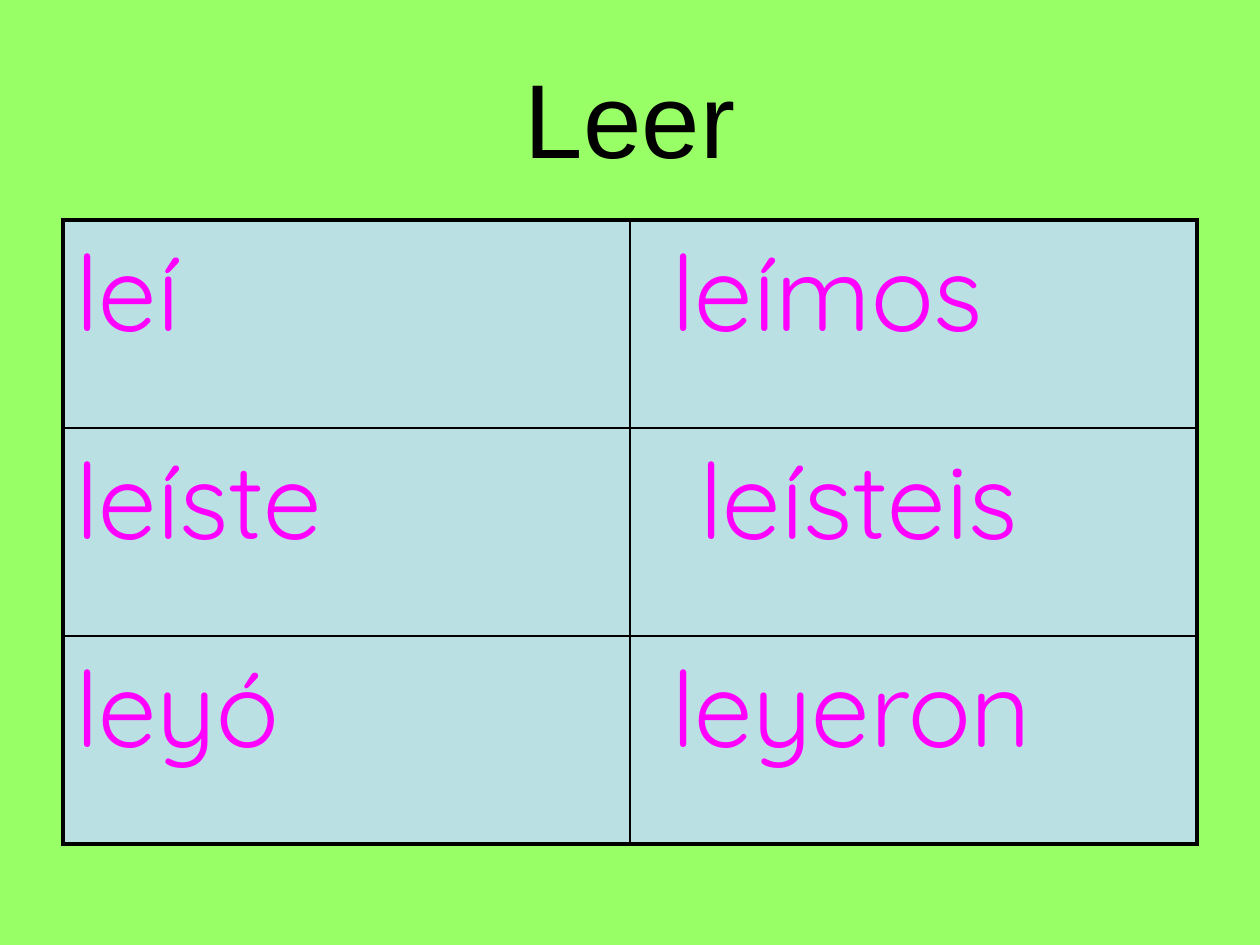
from lxml.etree import SubElement
from pptx import Presentation
from pptx.dml.color import RGBColor
from pptx.enum.text import MSO_ANCHOR, PP_ALIGN
from pptx.oxml.ns import qn
from pptx.util import Pt

EMU_PER_PX = 914400 / 126
COLORS = {
    "background": "99FF66",
    "cell": "BBE0E3",
    "border": "000000",
    "title": "000000",
    "verb": "FF00FF",
}
CONJUGATION = [["leí", "leímos"], ["leíste", "leísteis"], ["leyó", "leyeron"]]
INDENTS = [[0, 29], [0, 57], [0, 29]]
OUTER_WIDTH, INNER_WIDTH = 2.25, 1


def px(length):
    return round(length * EMU_PER_PX)


def color(name):
    return RGBColor.from_string(COLORS[name])


def write(frame, text, *, font, size, fill, align=PP_ALIGN.LEFT, indent=0, before=0):
    paragraph = frame.paragraphs[0]
    paragraph.alignment = align
    run = paragraph.add_run()
    run.text = text
    run.font.name = font
    run.font.size = Pt(size)
    run.font.color.rgb = color(fill)
    properties = paragraph._p.get_or_add_pPr()
    if indent:
        properties.set("marL", str(px(indent)))
        properties.set("indent", "0")
    if before:
        spacing = SubElement(properties, qn("a:spcBef"))
        SubElement(spacing, qn("a:spcPct"), val=str(before * 1000))


class VerbSlide:
    def __init__(self, presentation):
        self.size = 60
        self.slide = presentation.slides.add_slide(presentation.slide_layouts[6])
        background = self.slide.background.fill
        background.solid()
        background.fore_color.rgb = color("background")

    def title(self, text, left, top, width, height):
        heading = self.slide.shapes.add_textbox(px(left), px(top), px(width), px(height))
        frame = heading.text_frame
        frame.word_wrap = True
        frame.vertical_anchor = MSO_ANCHOR.MIDDLE
        write(frame, text, font="Arial", size=self.size, fill="title", align=PP_ALIGN.CENTER)

    def border(self, cell, side, width):
        line = SubElement(cell._tc.get_or_add_tcPr(), qn(f"a:ln{side}"), w=str(Pt(width)))
        fill = SubElement(line, qn("a:solidFill"))
        SubElement(fill, qn("a:srgbClr"), val=COLORS["border"])

    def table(self, rows, indents, left, top, width, row_height):
        row_count, column_count = len(rows), len(rows[0])
        forms = self.slide.shapes.add_table(
            row_count, column_count, px(left), px(top), px(width), px(row_height * row_count)
        ).table
        forms.first_row = False
        forms.horz_banding = False
        for r, row in enumerate(rows):
            for c, verb in enumerate(row):
                cell = forms.cell(r, c)
                edges = {
                    "L": c == 0,
                    "R": c == column_count - 1,
                    "T": r == 0,
                    "B": r == row_count - 1,
                }
                for side, is_outer in edges.items():
                    self.border(cell, side, OUTER_WIDTH if is_outer else INNER_WIDTH)
                cell.fill.solid()
                cell.fill.fore_color.rgb = color("cell")
                write(cell.text_frame, verb, font="Quicksand", size=self.size,
                      fill="verb", indent=indents[r][c], before=20)


def main():
    presentation = Presentation()
    presentation.slide_width = px(1260)
    presentation.slide_height = px(945)
    leer = VerbSlide(presentation)
    leer.title("Leer", 63, 38, 1134, 157)
    leer.table(CONJUGATION, INDENTS, 63, 220, 1134, 208)
    presentation.save("out.pptx")


if __name__ == "__main__":
    main()
